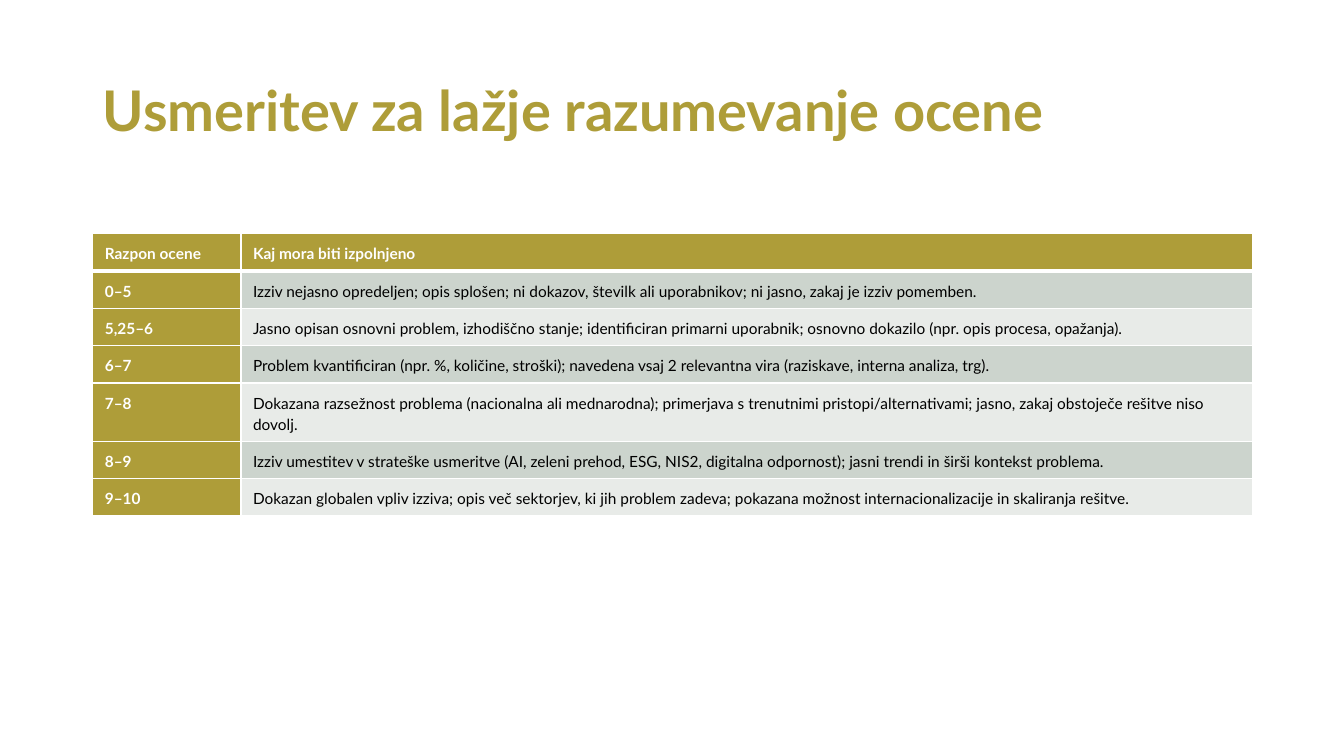
from dataclasses import dataclass

from lxml.etree import SubElement
from pptx import Presentation
from pptx.dml.color import RGBColor
from pptx.enum.text import MSO_ANCHOR, MSO_AUTO_SIZE, PP_ALIGN
from pptx.oxml.ns import qn
from pptx.util import Inches, Pt


@dataclass(frozen=True)
class Theme:
    font: str = "Lato"
    gold: str = "AE9D39"
    white: str = "FFFFFF"
    black: str = "000000"
    bands: tuple = ("CCD4CD", "E8EBE8")
    head: int = 40
    body: int = 11
    thin: int = 1
    thick: int = 3


THEME = Theme()

ROWS = [
    ("Razpon ocene", "Kaj mora biti izpolnjeno"),
    ("0–5", "Izziv nejasno opredeljen; opis splošen; ni dokazov, številk ali uporabnikov; "
            "ni jasno, zakaj je izziv pomemben."),
    ("5,25–6", "Jasno opisan osnovni problem, izhodiščno stanje; identificiran primarni uporabnik; "
               "osnovno dokazilo (npr. opis procesa, opažanja)."),
    ("6–7", "Problem kvantificiran (npr. %, količine, stroški); navedena vsaj 2 relevantna vira "
            "(raziskave, interna analiza, trg)."),
    ("7–8", "Dokazana razsežnost problema (nacionalna ali mednarodna); primerjava s trenutnimi "
            "pristopi/alternativami; jasno, zakaj obstoječe rešitve niso dovolj."),
    ("8–9", "Izziv umestitev v strateške usmeritve (AI, zeleni prehod, ESG, NIS2, digitalna "
            "odpornost); jasni trendi in širši kontekst problema."),
    ("9–10", "Dokazan globalen vpliv izziva; opis več sektorjev, ki jih problem zadeva; "
             "pokazana možnost internacionalizacije in skaliranja rešitve."),
]
WIDTHS = (1.47, 10.03)
HEIGHTS = (0.37, 0.37, 0.37, 0.37, 0.58, 0.37, 0.37)


def apply(item, style):
    for name, value in style.items():
        setattr(item, name, value)


def write(frame, text, size, color, bold, layout):
    frame.text = text
    para = frame.paragraphs[0]
    apply(para, layout)
    font = para.runs[0].font
    apply(font, {"name": THEME.font, "size": Pt(size), "bold": bold})
    font.color.rgb = RGBColor.from_string(color)


def add_title(slide, text):
    title = slide.shapes.title
    apply(title, {"left": Inches(0.92), "top": Inches(0.39),
                  "width": Inches(10.98), "height": Inches(1.46)})
    frame = title.text_frame
    apply(frame, {"vertical_anchor": MSO_ANCHOR.MIDDLE, "word_wrap": True,
                  "auto_size": MSO_AUTO_SIZE.NONE})
    write(frame, text, THEME.head, THEME.gold, True,
          {"alignment": PP_ALIGN.LEFT, "line_spacing": 0.9})


def add_edges(cell, row):
    props = cell._tc.get_or_add_tcPr()
    edges = {"lnL": THEME.thin, "lnR": THEME.thin,
             "lnT": THEME.thick if row == 1 else THEME.thin,
             "lnB": THEME.thick if row == 0 else THEME.thin}
    for tag, width in edges.items():
        line = SubElement(props, qn(f"a:{tag}"), w=str(Pt(width)))
        fill = SubElement(line, qn("a:solidFill"))
        SubElement(fill, qn("a:srgbClr"), val=THEME.white)


def fill_cell(cell, text, row, col):
    label = row == 0 or col == 0
    apply(cell, {"margin_left": Inches(0.12), "margin_top": Inches(0.08),
                 "margin_right": Inches(0.08), "margin_bottom": Inches(0.07),
                 "vertical_anchor": MSO_ANCHOR.TOP})
    add_edges(cell, row)
    cell.fill.solid()
    shade = THEME.gold if label else THEME.bands[(row - 1) % 2]
    cell.fill.fore_color.rgb = RGBColor.from_string(shade)
    write(cell.text_frame, text, THEME.body, THEME.white if label else THEME.black,
          label, {"line_spacing": 1.15, "space_after": Pt(10)})


def add_grid(slide, rows):
    frame = slide.shapes.add_table(len(rows), len(WIDTHS), Inches(0.92), Inches(2.32),
                                   Inches(sum(WIDTHS)), Inches(sum(HEIGHTS)))
    table = frame.table
    for column, width in zip(table.columns, WIDTHS):
        column.width = Inches(width)
    for line, height in zip(table.rows, HEIGHTS):
        line.height = Inches(height)
    for row, texts in enumerate(rows):
        for col, text in enumerate(texts):
            fill_cell(table.cell(row, col), text, row, col)


def main():
    deck = Presentation()
    apply(deck, {"slide_width": Inches(13.33), "slide_height": Inches(7.5)})
    slide = deck.slides.add_slide(deck.slide_layouts.get_by_name("Title Only"))
    add_title(slide, "Usmeritev za lažje razumevanje ocene")
    add_grid(slide, ROWS)
    deck.save("out.pptx")


if __name__ == "__main__":
    main()
